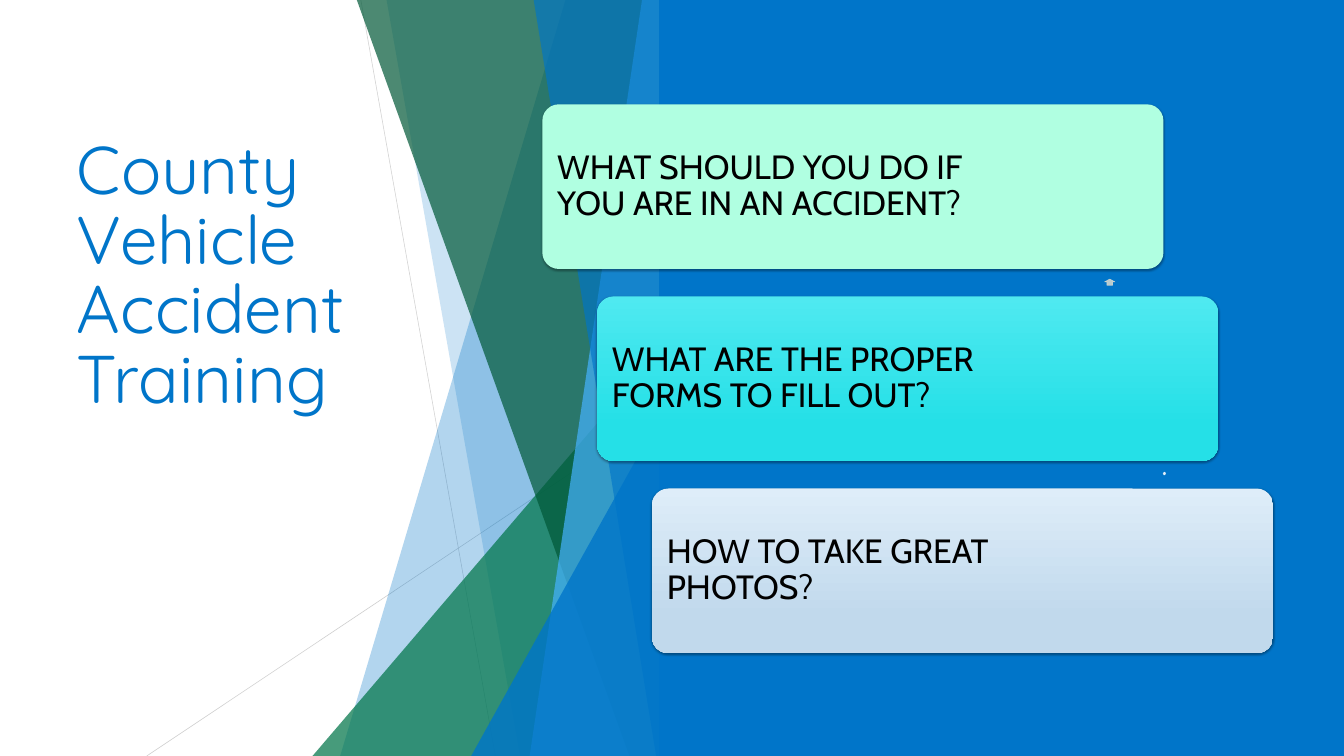
import dataclasses

import pptx
import pptx.dml.color
import pptx.enum.dml
import pptx.enum.shapes
import pptx.enum.text
import pptx.oxml
import pptx.oxml.ns
import pptx.util

SHAPES = pptx.enum.shapes.MSO_SHAPE
ANCHORS = pptx.enum.text.MSO_ANCHOR


@dataclasses.dataclass
class Theme:
    blue: str = "0075C9"
    green: str = "007549"
    forest: str = "005837"
    sky: str = "46B2FF"
    hairline: str = "BFBFBF"
    ink: str = "000000"
    mint: tuple = ("B0FFE1",)
    cyan: tuple = ("4FE9F0", "25E0E7")
    mist: tuple = ("DEEDF9", "C1D9EC")
    arrows: tuple = ("CCD6D0", "F3F8FD")
    title_font: str = "Quicksand"
    card_font: str = "Cabin"
    title_size: float = 96.3
    card_size: float = 48


THEME = Theme()


@dataclasses.dataclass
class Box:
    left: float
    top: float
    width: float
    height: float

    def point(self, column, row):
        return (round(self.left + self.width * column / 100),
                round(self.top + self.height * row / 100))

    def area(self, column, row, columns, rows):
        return Box(*self.point(column, row),
                   round(self.width * columns / 100), round(self.height * rows / 100))

    def frame(self):
        return self.left, self.top, self.width, self.height


def rgb(value):
    return pptx.dml.color.RGBColor.from_string(value)


def set_opacity(shape, percent):
    for color in shape._element.spPr.xpath(".//a:solidFill/a:srgbClr"):
        alpha = pptx.oxml.parse_xml(
            f'<a:alpha {pptx.oxml.ns.nsdecls("a")} val="{percent * 1000}"/>')
        color.append(alpha)


def paint(shape, color, opacity=None):
    shape.shadow.inherit = False
    shape.fill.solid()
    shape.fill.fore_color.rgb = rgb(color)
    shape.line.fill.background()
    if opacity is not None:
        set_opacity(shape, opacity)


def add_preset(page, kind, box, color, opacity=None, adjustments=()):
    shape = page.shapes.add_shape(kind, *box.frame())
    for index, value in enumerate(adjustments):
        shape.adjustments[index] = value
    paint(shape, color, opacity)
    return shape


def add_text(page, box, text, font, size, color, spacing, inset, anchor):
    frame = page.shapes.add_textbox(*box.frame()).text_frame
    frame.word_wrap = True
    frame.vertical_anchor = anchor
    frame.margin_left = frame.margin_right = pptx.util.Inches(inset)
    frame.margin_top = frame.margin_bottom = 0
    para = frame.paragraphs[0]
    para.line_spacing = spacing
    span = para.add_run()
    span.text = text
    span.font.name = font
    span.font.size = pptx.util.Pt(size)
    span.font.color.rgb = rgb(color)


def add_hairline(page, start, end, opacity):
    line = page.shapes.add_connector(
        pptx.enum.shapes.MSO_CONNECTOR.STRAIGHT, *start, *end)
    line.line.color.rgb = rgb(THEME.hairline)
    line.line.width = pptx.util.Pt(0.75)
    set_opacity(line, opacity)
    line._element.spPr.append(
        pptx.oxml.parse_xml(f'<a:effectLst {pptx.oxml.ns.nsdecls("a")}/>'))


def add_sliver(page, box, top_column, bottom_column, color, opacity):
    builder = page.shapes.build_freeform(*box.point(top_column, 0))
    corners = [(100, 0), (100, 100), (bottom_column, 100)]
    builder.add_line_segments([box.point(*corner) for corner in corners], close=True)
    paint(builder.convert_to_shape(), color, opacity)


def add_wedge(page, box, column, row, color, opacity):
    add_preset(page, SHAPES.ISOSCELES_TRIANGLE,
               box.area(column, row, 100 - column, 100 - row), color, opacity, [1])


def draw_facets(page, box):
    add_hairline(page, box.point(13.46, 0), box.point(50.91, 100), 75)
    add_hairline(page, box.point(100, 53.67), box.point(-46.14, 100), 80)
    add_sliver(page, box, 70.41, 7.71, THEME.blue, 30)
    add_sliver(page, box, 20.62, 57.78, THEME.blue, 20)
    add_wedge(page, box, 0, 44.47, THEME.green, 72)
    add_sliver(page, box, 12.34, 88.22, THEME.forest, 70)
    add_sliver(page, box, 91.73, 60.45, THEME.sky, 70)
    add_sliver(page, box, 61.57, 95.65, THEME.blue, 65)
    add_wedge(page, box, 44.18, 52.33, THEME.blue, 80)


def draw_title(page, box):
    add_text(page, box, "County Vehicle Accident Training", THEME.title_font,
             THEME.title_size, THEME.blue, 0.86, 0.1, ANCHORS.TOP)


def draw_card(page, box, text, colors):
    card = add_preset(page, SHAPES.ROUNDED_RECTANGLE, box, colors[0], adjustments=[0.1])
    if len(colors) > 1:
        card.fill.gradient()
        card.fill.gradient_angle = 270
        for stop, color, position in zip(card.fill.gradient_stops, colors, (0, 0.78)):
            stop.color.rgb = rgb(color)
            stop.position = position
    effects = card._element.spPr.find(pptx.oxml.ns.qn("a:effectLst"))
    effects.append(pptx.oxml.parse_xml(
        f'<a:outerShdw {pptx.oxml.ns.nsdecls("a")} blurRad="{pptx.util.Pt(3)}" '
        f'dist="{pptx.util.Pt(2)}" dir="5400000" rotWithShape="0">'
        '<a:srgbClr val="000000"><a:alpha val="35000"/></a:srgbClr></a:outerShdw>'))
    add_text(page, box.area(0.77, 2.9, 72, 94.2), text, THEME.card_font,
             THEME.card_size, THEME.ink, 0.9, 0.2, ANCHORS.MIDDLE)


def draw_arrow(page, box, color):
    arrow = add_preset(page, SHAPES.UP_ARROW, box, color, adjustments=[0.55, 0.45])
    arrow.line.color.rgb = rgb(color)
    arrow.line.width = pptx.util.Pt(1)
    set_opacity(arrow, 90)


def draw_steps(page, box):
    cards = [
        ("WHAT SHOULD YOU DO IF YOU ARE IN AN ACCIDENT?", THEME.mint),
        ("WHAT ARE THE PROPER FORMS TO FILL OUT?", THEME.cyan),
        ("HOW TO TAKE GREAT PHOTOS?", THEME.mist),
    ]
    for index, (text, colors) in enumerate(cards):
        draw_card(page, box.area(7.5 * index, 35 * index, 85, 30), text, colors)
    places = [(76.97, 31.86, 1.38, 1.1), (84.97, 67.03, 0.34, 0.46)]
    for place, color in zip(places, THEME.arrows):
        draw_arrow(page, box.area(*place), color)


def main():
    deck = pptx.Presentation()
    deck.slide_width = pptx.util.Inches(26.67)
    deck.slide_height = pptx.util.Inches(15)
    page = deck.slides.add_slide(deck.slide_layouts[6])
    whole = Box(0, 0, deck.slide_width, deck.slide_height)
    draw_title(page, whole.area(5.36, 18.4, 29.1, 38.47))
    draw_facets(page, whole.area(23.25, 0, 26.73, 100))
    add_preset(page, SHAPES.RECTANGLE, whole.area(49.04, 0, 50.96, 100), THEME.blue)
    draw_steps(page, whole.area(40.35, 13.8, 54.37, 72.6))
    deck.save("out.pptx")


if __name__ == "__main__":
    main()
